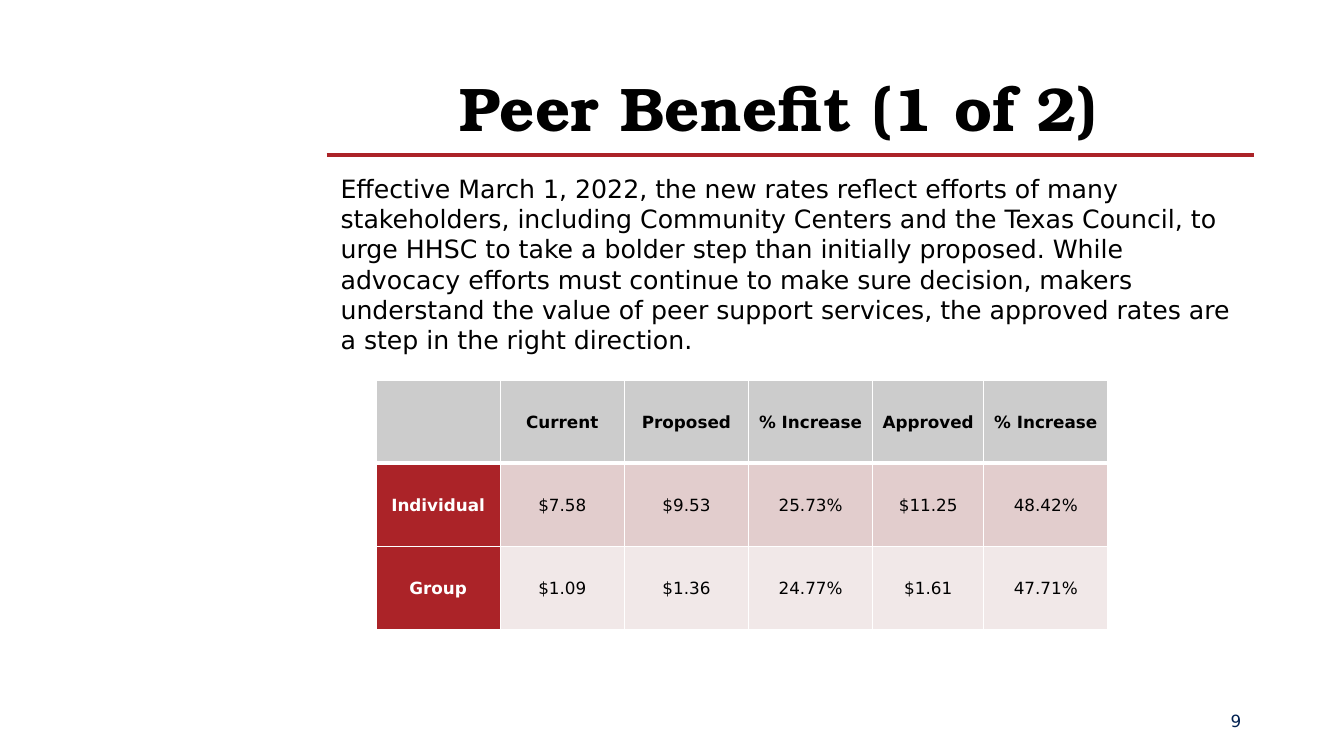
from lxml import etree
from pptx import Presentation
from pptx.dml.color import RGBColor
from pptx.enum.shapes import MSO_CONNECTOR
from pptx.enum.text import MSO_ANCHOR, MSO_AUTO_SIZE, PP_ALIGN
from pptx.oxml.ns import qn
from pptx.util import Inches, Pt

RED = RGBColor(0xAB, 0x23, 0x28)
NAVY = RGBColor(0x02, 0x21, 0x51)
BLACK = RGBColor(0x00, 0x00, 0x00)
WHITE = RGBColor(0xFF, 0xFF, 0xFF)
GREY = RGBColor(0xCC, 0xCC, 0xCC)
ROSE = RGBColor(0xE2, 0xCD, 0xCD)
PALE_ROSE = RGBColor(0xF1, 0xE8, 0xE8)
BODY_FONT = "DejaVu Sans"
TITLE_FONT = "TeX Gyre Bonum"

INTRO = (
    "Effective March 1, 2022, the new rates reflect efforts of many stakeholders, "
    "including Community Centers and the Texas Council, to urge HHSC to take a bolder "
    "step than initially proposed. While advocacy efforts must continue to make sure "
    "decision, makers understand the value of peer support services, the approved "
    "rates are a step in the right direction."
)
RATES = [
    ["", "Current", "Proposed", "% Increase", "Approved", "% Increase"],
    ["Individual", "$7.58", "$9.53", "25.73%", "$11.25", "48.42%"],
    ["Group", "$1.09", "$1.36", "24.77%", "$1.61", "47.71%"],
]
ROW_FILLS = [GREY, ROSE, PALE_ROSE]
COLUMN_WIDTHS = [1.23, 1.23, 1.23, 1.23, 1.1, 1.23]


def add_run(p, text, size, color=BLACK, bold=False, font=BODY_FONT):
    r = p.add_run()
    r.text = text
    r.font.name, r.font.size, r.font.bold = font, Pt(size), bold
    r.font.color.rgb = color


def add_title(s, left, top, width, height):
    sp = s.shapes.title
    sp.left, sp.top, sp.width, sp.height = map(Inches, (left, top, width, height))
    tf = sp.text_frame
    tf.auto_size = MSO_AUTO_SIZE.NONE
    tf.vertical_anchor = MSO_ANCHOR.BOTTOM
    p = tf.paragraphs[0]
    p.alignment = PP_ALIGN.CENTER
    add_run(p, "Peer Benefit (1 of 2) ", 44, bold=True, font=TITLE_FONT)


def add_rule(s, left, top, width):
    line = s.shapes.add_connector(
        MSO_CONNECTOR.STRAIGHT, *map(Inches, (left, top, left + width, top)))
    line.line.color.rgb = RED
    line.line.width = Pt(3)
    etree.SubElement(line._element.spPr, qn("a:effectLst"))


def add_text(s, box, text, size, color=BLACK, align=PP_ALIGN.LEFT, anchor=MSO_ANCHOR.TOP):
    tf = s.shapes.add_textbox(*map(Inches, box)).text_frame
    tf.word_wrap = True
    tf.vertical_anchor = anchor
    p = tf.paragraphs[0]
    p.alignment = align
    add_run(p, text, size, color)


def set_borders(cell, bottom):
    """White edges; the schema wants them ahead of the cell fill."""
    tcPr = cell._tc.get_or_add_tcPr()
    for i, (tag, width) in enumerate(
            [("a:lnL", 1), ("a:lnR", 1), ("a:lnT", 1), ("a:lnB", bottom)]):
        ln = etree.Element(qn(tag), w=str(Pt(width)))
        fill = etree.SubElement(ln, qn("a:solidFill"))
        etree.SubElement(fill, qn("a:srgbClr"), val=str(WHITE))
        tcPr.insert(i, ln)


def add_rates(s, left, top, width, height):
    table = s.shapes.add_table(
        len(RATES), len(COLUMN_WIDTHS), *map(Inches, (left, top, width, height))).table
    for column, share in zip(table.columns, COLUMN_WIDTHS):
        column.width = Inches(width * share / sum(COLUMN_WIDTHS))
    for i, row in enumerate(RATES):
        for j, text in enumerate(row):
            cell = table.cell(i, j)
            header, label = i == 0, i > 0 and j == 0
            cell.fill.solid()
            cell.fill.fore_color.rgb = RED if label else ROW_FILLS[i]
            # The thick edge under the header is shared with the row below
            set_borders(cell, bottom=3 if header else 1)
            cell.vertical_anchor = MSO_ANCHOR.MIDDLE
            cell.margin_left = cell.margin_right = Inches(0.07)
            cell.margin_top = cell.margin_bottom = 0
            p = cell.text_frame.paragraphs[0]
            p.alignment = PP_ALIGN.CENTER
            p.line_spacing = 1.07
            if text:
                add_run(p, text, 12, WHITE if label else BLACK, header or label)


def main():
    prs = Presentation()
    prs.slide_width, prs.slide_height = Inches(13.33), Inches(7.5)
    s = prs.slides.add_slide(prs.slide_layouts[5])

    # Heading and its rule
    left, width = 3.24, 9.17
    add_rule(s, left, 1.54, 9.2)
    add_title(s, left, 0.67, width, 0.81)

    # Introduction and rate table
    add_text(s, (3.28, 1.67, 9.13, 1.92), INTRO, 18)
    add_rates(s, 3.73, 3.77, 7.26, 2.48)

    # Slide number
    add_text(s, (10.17, 6.95, 2.24, 0.4), "9", 12, NAVY, PP_ALIGN.RIGHT, MSO_ANCHOR.MIDDLE)
    prs.save("out.pptx")


if __name__ == "__main__":
    main()
